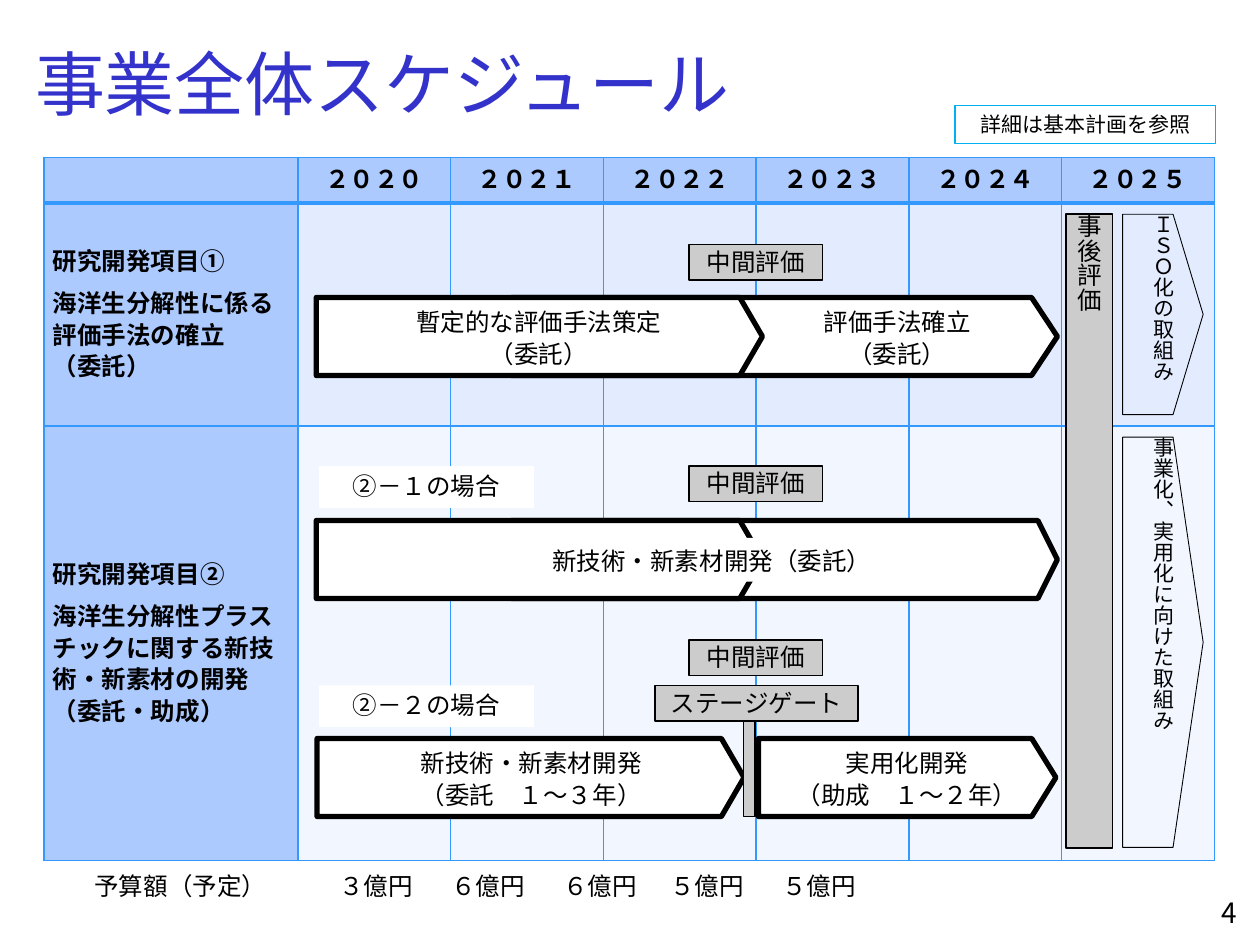
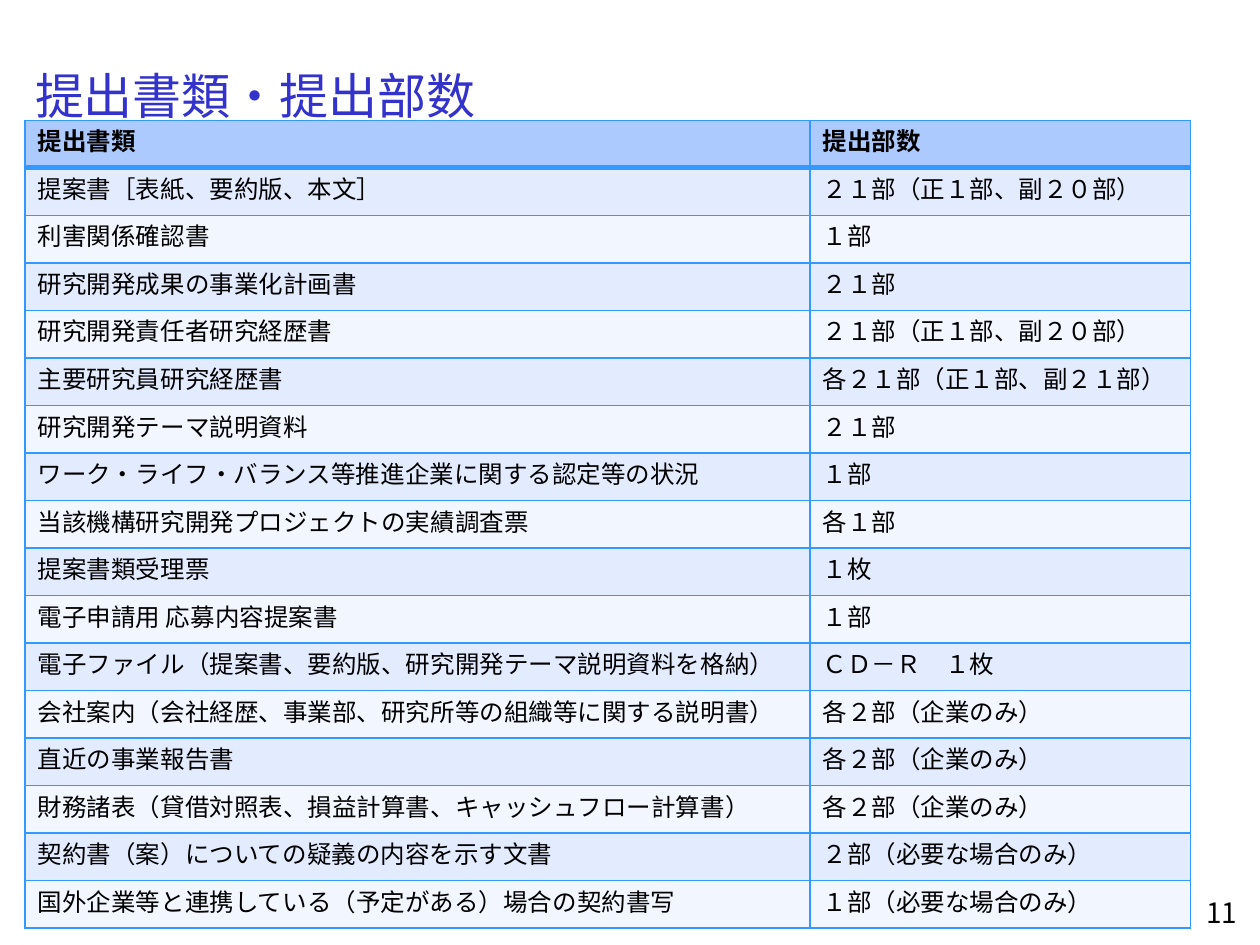
from lxml.etree import SubElement
from pptx import Presentation
from pptx.dml.color import RGBColor
from pptx.enum.shapes import MSO_SHAPE as Preset
from pptx.enum.text import MSO_ANCHOR as Anchor, MSO_AUTO_SIZE as AutoSize, PP_ALIGN as Align
from pptx.oxml.ns import qn
from pptx.util import Pt

FONT = "Noto Sans CJK JP"
BLACK, WHITE, GRAY = "000000", "FFFFFF", "CCCCCC"
TITLE_BLUE, RULE, NOTE_RULE = "3333CC", "3399FF", "00B0F0"
HEADER, BANDS = "ADCAFF", ("E3ECFF", "F1F6FF")
NO_INSETS = (0, 0, 0, 0)
BOX_INSETS = (7.2, 3.6, 7.2, 3.6)
CELL_INSETS = (5, 0, 5, 0)
BAR_HEIGHT = 44.6
TAG_HEIGHT = 20.2


def color(value):
    return RGBColor.from_string(value)


def write(frame, lines, size=14, ink=BLACK, bold=False, align=Align.LEFT,
          spacing=None, gap_after_first=0):
    for index, line in enumerate(lines):
        para = frame.paragraphs[0] if index == 0 else frame.add_paragraph()
        para.text = line
        para.alignment = align
        if spacing:
            para.line_spacing = Pt(spacing)
        if index == 0 and gap_after_first:
            para.space_after = Pt(gap_after_first)
        font = para.font
        font.name, font.size, font.bold = FONT, Pt(size), bold
        font.color.rgb = color(ink)
        defaults = para._p.pPr.find(qn("a:defRPr"))
        SubElement(defaults, qn("a:ea")).set("typeface", FONT)


def fit_frame(frame, insets, anchor):
    frame.word_wrap = True
    frame.auto_size = AutoSize.NONE
    frame.vertical_anchor = anchor
    (frame.margin_left, frame.margin_top,
     frame.margin_right, frame.margin_bottom) = map(Pt, insets)


def add_text(page, box, lines, insets=BOX_INSETS, anchor=Anchor.MIDDLE, **style):
    frame = page.shapes.add_textbox(*map(Pt, box)).text_frame
    fit_frame(frame, insets, anchor)
    write(frame, lines, **style)
    return frame


def paint(shape, fill=None, line=None, weight=1):
    shape.shadow.inherit = False
    if fill:
        shape.fill.solid()
        shape.fill.fore_color.rgb = color(fill)
    else:
        shape.fill.background()
    if line:
        shape.line.color.rgb = color(line)
        shape.line.width = Pt(weight)
    else:
        shape.line.fill.background()


def add_box(page, box, lines=(), preset=Preset.RECTANGLE, fill=None, line=None,
            weight=1, insets=NO_INSETS, anchor=Anchor.MIDDLE, **style):
    shape = page.shapes.add_shape(preset, *map(Pt, box))
    paint(shape, fill, line, weight)
    if lines:
        fit_frame(shape.text_frame, insets, anchor)
        write(shape.text_frame, lines, **style)
    return shape


def write_downward(shape, text, size):
    fit_frame(shape.text_frame, NO_INSETS, Anchor.MIDDLE)
    shape.text_frame._txBody.bodyPr.set("vert", "eaVert")
    write(shape.text_frame, [text], size=size)


def rule_cell(cell, top, bottom):
    props = cell._tc.get_or_add_tcPr()
    sides = (("a:lnL", 1), ("a:lnR", 1), ("a:lnT", top), ("a:lnB", bottom))
    for position, (side, weight) in enumerate(sides):
        edge = props.makeelement(qn(side), {"w": str(Pt(weight))})
        fill = SubElement(edge, qn("a:solidFill"))
        SubElement(fill, qn("a:srgbClr")).set("val", RULE)
        props.insert(position, edge)


def add_grid(page, box, columns, rows):
    table = page.shapes.add_table(len(rows), len(columns), *map(Pt, box)).table
    table.first_row = table.horz_banding = False
    for column, width in zip(table.columns, columns):
        column.width = Pt(width)
    for index, (row, height) in enumerate(zip(table.rows, rows)):
        row.height = Pt(height)
        for cell in row.cells:
            cell.fill.solid()
            cell.fill.fore_color.rgb = color(HEADER if index == 0 else BANDS[(index - 1) % 2])
            rule_cell(cell, 3 if index == 1 else 1, 3 if index == 0 else 1)
    return table


def fill_cell(cell, lines, insets, anchor, **style):
    (cell.margin_left, cell.margin_top,
     cell.margin_right, cell.margin_bottom) = map(Pt, insets)
    cell.vertical_anchor = anchor
    write(cell.text_frame, lines, spacing=18, **style)


def start_page(deck, title, title_size, number):
    page = deck.slides.add_slide(deck.slide_layouts[5])
    heading = page.shapes.title
    heading.left, heading.top, heading.width, heading.height = map(Pt, (20, 29, 638, 57))
    fit_frame(heading.text_frame, NO_INSETS, Anchor.TOP)
    write(heading.text_frame, [title], size=title_size, ink=TITLE_BLUE, spacing=42)
    add_text(page, (544, 508, 170, 28), [number], anchor=Anchor.TOP, size=16, align=Align.RIGHT)
    return page


def schedule_table(page, box):
    table = add_grid(page, box, [145] + [87.3] * 6, [26, 127.4, 248.4])
    items = (["研究開発項目①", "海洋生分解性に係る評価手法の確立", "（委託）"],
             ["研究開発項目②", "海洋生分解性プラスチックに関する新技術・新素材の開発", "（委託・助成）"])
    years = ["", "２０２０", "２０２１", "２０２２", "２０２３", "２０２４", "２０２５"]
    for column, year in enumerate(years):
        fill_cell(table.cell(0, column), [year], CELL_INSETS, Anchor.MIDDLE,
                  bold=True, align=Align.CENTER)
    for row, item in enumerate(items, 1):
        first = table.cell(row, 0)
        first.fill.fore_color.rgb = color(HEADER)
        fill_cell(first, item, CELL_INSETS, Anchor.MIDDLE, bold=True, gap_after_first=6)


def lane(page, left, top, bars, labels):
    for x, width, point in bars:
        bar = add_box(page, (left + x, top, width, BAR_HEIGHT), preset=Preset.PENTAGON,
                      fill=WHITE, line=BLACK, weight=3)
        bar.adjustments[0] = point
    for x, width, lines in labels:
        add_text(page, (left + x, top, width, 45), lines, align=Align.CENTER, spacing=18)


def gray_tag(page, left, top, width, text):
    add_box(page, (left, top, width, TAG_HEIGHT), [text], fill=GRAY, line=BLACK,
            align=Align.CENTER, spacing=16)


def case_tag(page, left, top, text):
    add_box(page, (left, top, 123, 23.8), [text], fill=WHITE, insets=BOX_INSETS,
            anchor=Anchor.TOP, align=Align.CENTER, spacing=16)


def follow_up(page, box, text):
    left, top, width, height = box
    shoulder = left + 28.8
    outline = page.shapes.build_freeform(Pt(left), Pt(top), scale=1.0)
    corners = ((left, top + height), (shoulder, top + height),
               (left + width, top + height / 2), (shoulder, top))
    outline.add_line_segments([(Pt(x), Pt(y)) for x, y in corners], close=True)
    shape = outline.convert_to_shape()
    paint(shape, line=BLACK, weight=0.5)
    write_downward(shape, text, 12)


def schedule_bars(page, box):
    left, top = box[:2]
    lane(page, left, top + 80, [(267, 312, 0.33), (155.5, 255, 0.29)],
         [(187, 191.5, ["暫定的な評価手法策定", "（委託）"]),
          (422.6, 130, ["評価手法確立", "（委託）"])])
    lane(page, left, top + 207.4, [(267, 312, 0.25), (155.5, 255, 0.29)], [])
    add_box(page, (left + 261.4, top + 217.4, 240.5, 25), ["新技術・新素材開発（委託）"],
            fill=WHITE, align=Align.CENTER, spacing=18)
    lane(page, left, top + 332, [(156, 244, 0.29), (408.2, 170, 0.31)],
         [(176.4, 204, ["新技術・新素材開発", "（委託　１～３年）"]),
          (416.9, 152.6, ["実用化開発", "（助成　１～２年）"])])
    add_box(page, (left + 399.6, top + 306, 6.5, 70.6), fill=GRAY, line=BLACK)
    gray_tag(page, left + 349.2, top + 301.7, 116, "ステージゲート")
    for y in (49.7, 176.4, 275.8):
        gray_tag(page, left + 368.6, top + y, 76.3, "中間評価")
    for y, text in ((176.4, "②－１の場合"), (301.7, "②－２の場合")):
        case_tag(page, left + 157, top + y, text)
    final = add_box(page, (left + 584, top + 32.4, 26.6, 362),
                    preset=Preset.FLOWCHART_PROCESS, fill=GRAY, line=BLACK)
    write_downward(final, "事後評価", 14)
    follow_up(page, (left + 616.3, top + 32.4, 46, 114.5), "ＩＳＯ化の取組み")
    follow_up(page, (left + 616.3, top + 159.8, 46, 234.4), "事業化、実用化に向けた取組み")


def budget_line(page, box):
    frame = add_text(page, box, [""], insets=NO_INSETS)
    para = frame.paragraphs[0]
    props = para._p.get_or_add_pPr()
    stops = props.makeelement(qn("a:tabLst"), {})
    for stop in (140, 204, 268, 329, 393):
        SubElement(stops, qn("a:tab"), pos=str(Pt(stop)), algn="l")
    props.find(qn("a:defRPr")).addprevious(stops)
    para.line_spacing = Pt(18)
    para.add_run().text = "\t".join(
        ["予算額（予定）", "３億円", "６億円", "６億円", "５億円", "５億円"])


def schedule_page(deck):
    page = start_page(deck, "事業全体スケジュール", 40, "4")
    area = (25.2, 90, 668.8, 401.8)
    schedule_table(page, area)
    schedule_bars(page, area)
    budget_line(page, (54, 492.5, 623, 26))
    add_box(page, (545.8, 60.5, 149, 21.6), ["詳細は基本計画を参照"], line=NOTE_RULE,
            weight=0.75, size=12, align=Align.CENTER, spacing=14)


DOCUMENTS = (
    ("提出書類", "提出部数"),
    ("提案書［表紙、要約版、本文］", "２１部（正１部、副２０部）"),
    ("利害関係確認書", "１部"),
    ("研究開発成果の事業化計画書", "２１部"),
    ("研究開発責任者研究経歴書", "２１部（正１部、副２０部）"),
    ("主要研究員研究経歴書", "各２１部（正１部、副２１部）"),
    ("研究開発テーマ説明資料", "２１部"),
    ("ワーク・ライフ・バランス等推進企業に関する認定等の状況", "１部"),
    ("当該機構研究開発プロジェクトの実績調査票", "各１部"),
    ("提案書類受理票", "１枚"),
    ("電子申請用 応募内容提案書", "１部"),
    ("電子ファイル（提案書、要約版、研究開発テーマ説明資料を格納）", "ＣＤ－Ｒ　１枚"),
    ("会社案内（会社経歴、事業部、研究所等の組織等に関する説明書）", "各２部（企業のみ）"),
    ("直近の事業報告書", "各２部（企業のみ）"),
    ("財務諸表（貸借対照表、損益計算書、キャッシュフロー計算書）", "各２部（企業のみ）"),
    ("契約書（案）についての疑義の内容を示す文書", "２部（必要な場合のみ）"),
    ("国外企業等と連携している（予定がある）場合の契約書写", "１部（必要な場合のみ）"),
)


def document_table(page, box):
    height = box[3] / len(DOCUMENTS)
    table = add_grid(page, box, [448.4, 217.6], [height] * len(DOCUMENTS))
    for row, texts in enumerate(DOCUMENTS):
        for column, text in enumerate(texts):
            fill_cell(table.cell(row, column), [text], BOX_INSETS, Anchor.TOP, bold=row == 0)


def documents_page(deck):
    page = start_page(deck, "提出書類・提出部数", 28, "11")
    document_table(page, (14.4, 68.7, 666, 462))


def main():
    deck = Presentation()
    deck.slide_width, deck.slide_height = Pt(720), Pt(540)
    schedule_page(deck)
    documents_page(deck)
    deck.save("out.pptx")


if __name__ == "__main__":
    main()
